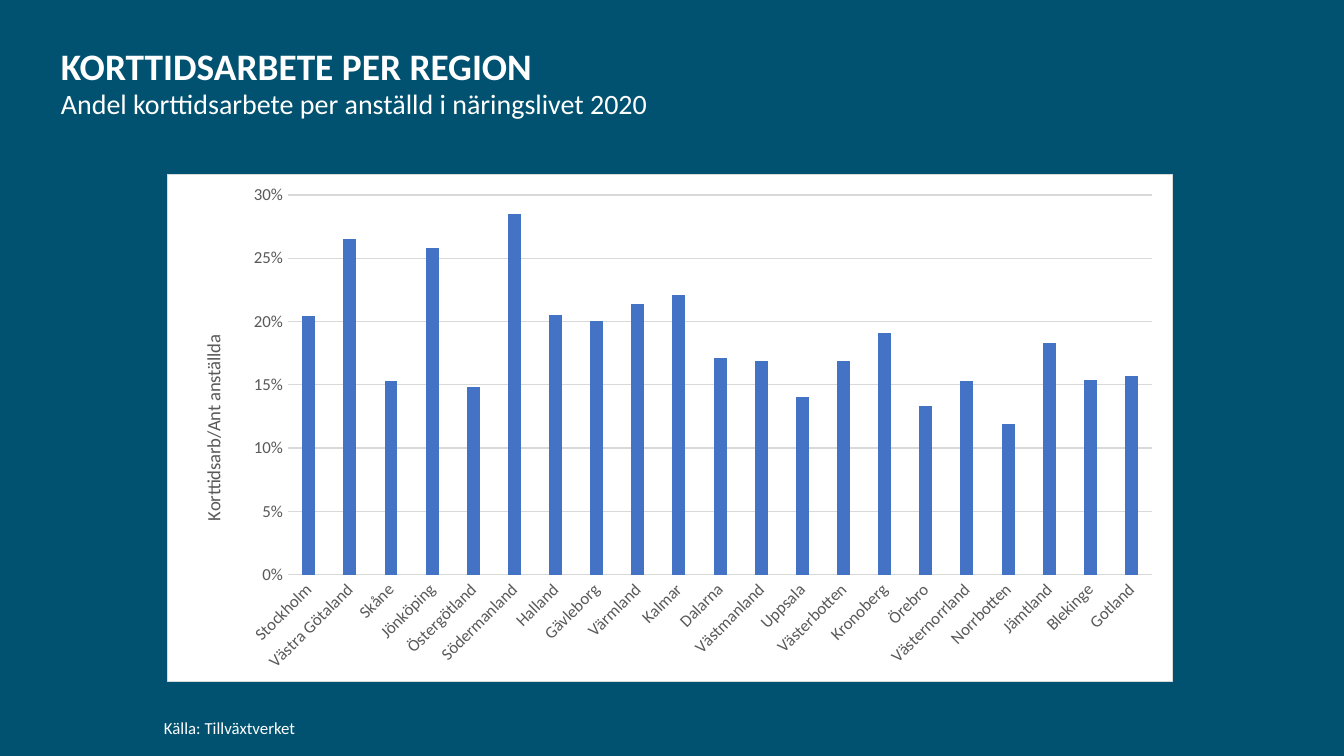
from lxml.etree import SubElement
from pptx import Presentation
from pptx.chart.data import CategoryChartData
from pptx.dml.color import RGBColor
from pptx.enum.chart import XL_CHART_TYPE as ChartType, XL_TICK_MARK as TickMark
from pptx.enum.text import MSO_ANCHOR as Anchor
from pptx.oxml import parse_xml
from pptx.oxml.ns import nsdecls, qn
from pptx.util import Pt

SCALE = 914400 / 134.4  # EMU per px
FONT = "Calibri"
PETROL = RGBColor(0x00, 0x52, 0x70)
WHITE = RGBColor(0xFF, 0xFF, 0xFF)
BLACK = RGBColor(0x00, 0x00, 0x00)
GRAY = RGBColor(0x59, 0x59, 0x59)
LIGHT_GRAY = RGBColor(0xD9, 0xD9, 0xD9)
BLUE = RGBColor(0x44, 0x72, 0xC4)

SHARES = {
    "Stockholm": 0.204, "Västra Götaland": 0.265, "Skåne": 0.153,
    "Jönköping": 0.258, "Östergötland": 0.148, "Södermanland": 0.285,
    "Halland": 0.205, "Gävleborg": 0.2, "Värmland": 0.214,
    "Kalmar": 0.221, "Dalarna": 0.171, "Västmanland": 0.169,
    "Uppsala": 0.14, "Västerbotten": 0.169, "Kronoberg": 0.191,
    "Örebro": 0.133, "Västernorrland": 0.153, "Norrbotten": 0.119,
    "Jämtland": 0.183, "Blekinge": 0.154, "Gotland": 0.157,
}


def px(length):
    return round(length * SCALE)


def set_layout(parent, **settings):
    """Place a chart part by fractions of the chart area."""
    layout = parent.find(qn("c:layout"))
    if layout is None:
        layout = parse_xml(f"<c:layout {nsdecls('c')}/>")
        parent.insert(0, layout)
    manual = SubElement(layout, qn("c:manualLayout"))
    for name, value in settings.items():
        SubElement(manual, qn(f"c:{name}")).set("val", str(value))


class SlideBuilder:
    def __init__(self, presentation):
        self.slide = presentation.slides.add_slide(presentation.slide_layouts[6])
        fill = self.slide.background.fill
        fill.solid()
        fill.fore_color.rgb = PETROL

    def style(self, font, size, color, bold=False):
        font.name = FONT
        font.size = Pt(size)
        font.color.rgb = color
        font.bold = bold

    def text(self, box, text, size, bold=False, anchor=Anchor.TOP,
             insets=(13, 7, 13, 7), spacing=1.0):
        shape = self.slide.shapes.add_textbox(*map(px, box))
        frame = shape.text_frame
        frame.word_wrap = True
        frame.vertical_anchor = anchor
        (frame.margin_left, frame.margin_top,
         frame.margin_right, frame.margin_bottom) = map(px, insets)
        frame.text = text
        paragraph = frame.paragraphs[0]
        paragraph.line_spacing = spacing
        self.style(paragraph.runs[0].font, size, WHITE, bold)

    def column_chart(self, box, shares, axis_title):
        data = CategoryChartData(number_format="0%")
        data.categories = list(shares)
        data.add_series("Series 1", list(shares.values()))
        chart = self.slide.shapes.add_chart(
            ChartType.COLUMN_CLUSTERED, *map(px, box), data).chart
        chart.has_legend = False
        chart.has_title = False
        self.style(chart.font, 10, BLACK)

        # Chart area: white with a thin border
        chart.font._element.getparent()
        text_properties = chart._chartSpace.find(qn("c:txPr"))
        text_properties.addprevious(parse_xml(
            f"<c:spPr {nsdecls('c', 'a')}>"
            f'<a:solidFill><a:srgbClr val="{WHITE}"/></a:solidFill>'
            f'<a:ln w="{Pt(0.75)}"><a:solidFill><a:srgbClr val="{LIGHT_GRAY}"/>'
            "</a:solidFill></a:ln></c:spPr>"))
        set_layout(chart._chartSpace.chart.plotArea, layoutTarget="inner",
                   xMode="edge", yMode="edge", x=0.12, y=0.04, w=0.86, h=0.75)

        # Columns
        plot = chart.plots[0]
        plot.vary_by_categories = False
        plot.gap_width = 219
        plot.overlap = -27
        fill = plot.series[0].format.fill
        fill.solid()
        fill.fore_color.rgb = BLUE

        # Axes
        categories, values = chart.category_axis, chart.value_axis
        for axis in (categories, values):
            axis.major_tick_mark = axis.minor_tick_mark = TickMark.NONE
            self.style(axis.tick_labels.font, 9, GRAY)
        label_body = categories._element.find(qn("c:txPr")).find(qn("a:bodyPr"))
        label_body.set("rot", "-2700000")
        label_body.set("vert", "horz")
        values.minimum_scale, values.maximum_scale = 0, 0.3
        values.major_unit = 0.05
        values.tick_labels.number_format = "0%"
        values.tick_labels.number_format_is_linked = False
        values.format.line.fill.background()
        for line in (categories.format.line, values.major_gridlines.format.line):
            line.color.rgb = LIGHT_GRAY
            line.width = Pt(0.75)

        # Value axis title
        title = values.axis_title
        frame = title.text_frame
        frame.text = axis_title
        self.style(frame.paragraphs[0].runs[0].font, 10, GRAY)
        title_body = frame._txBody.find(qn("a:bodyPr"))
        title_body.set("rot", "-5400000")
        title_body.set("vert", "horz")
        set_layout(title._element, xMode="edge", yMode="edge", x=0.03, y=0.31)


def main():
    presentation = Presentation()
    presentation.slide_width, presentation.slide_height = px(1344), px(756)
    builder = SlideBuilder(presentation)

    # Heading
    builder.text((61, 44, 1222, 43), "KORTTIDSARBETE PER REGION", 20, bold=True,
                 anchor=Anchor.BOTTOM, insets=(0, 0, 0, 0), spacing=0.7)
    builder.text((61, 87, 1222, 40),
                 "Andel korttidsarbete per anställd i näringslivet 2020", 15,
                 insets=(0, 3, 0, 7), spacing=0.9)

    # Chart and its source
    builder.column_chart((167, 174, 1006, 508), SHARES, "Korttidsarb/Ant anställda")
    builder.text((151, 711, 672, 34), "Källa: Tillväxtverket", 9)

    presentation.save("out.pptx")


if __name__ == "__main__":
    main()
